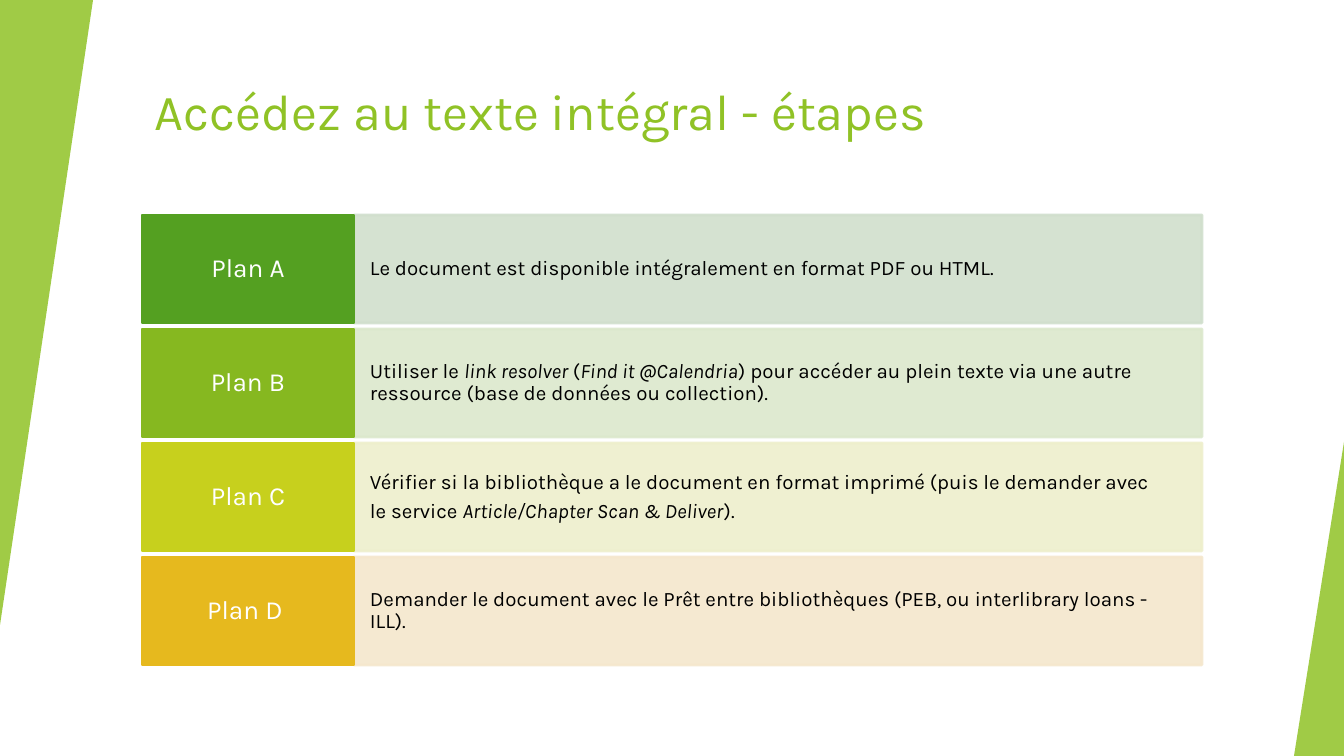
"""Build a slide listing four plans for reaching the full text of a document."""
from lxml.etree import SubElement
from pptx import Presentation
from pptx.dml.color import RGBColor
from pptx.enum.shapes import MSO_SHAPE
from pptx.enum.text import MSO_ANCHOR, PP_ALIGN
from pptx.oxml.ns import qn
from pptx.util import Pt

PX = 9144000 / 1344
COLORS = {"accent": "90C226", "white": "FFFFFF", "black": "000000"}
PLANS = [
    ("Plan A", "54A021", "D1DFCD",
     [[("Le document est disponible intégralement en format PDF ou HTML.", False)]]),
    ("Plan B", "86B820", "DCE8CC",
     [[("Utiliser le ", False), ("link resolver ", True), ("(", False),
       ("Find it @Calendria", True),
       (") pour accéder au plein texte via une autre ressource "
        "(base de données ou collection).", False)]]),
    ("Plan C", "C7D01D", "EEEFCC",
     [[("Vérifier si la bibliothèque a le document en format imprimé "
        "(puis le demander avec", False)],
      [("le service ", False), ("Article/Chapter Scan & Deliver", True), (").", False)]]),
    ("Plan D ", "E6B91E", "F5E7CD",
     [[("Demander le document avec le Prêt entre bibliothèques "
        "(PEB, ou interlibrary loans - ILL).", False)]]),
]


def add_block(kind, box, color, opacity=100, outlined=True):
    block = slide.shapes.add_shape(kind, *[round(n * PX) for n in box])
    block.shadow.inherit = False
    block.fill.solid()
    block.fill.fore_color.rgb = RGBColor.from_string(color)
    if outlined:
        block.line.width = Pt(1.5)
        block.line.color.rgb = RGBColor.from_string(color)
    else:
        block.line.fill.background()
    if opacity < 100:
        for tint in block.element.spPr.iter(qn("a:srgbClr")):
            SubElement(tint, qn("a:alpha")).set("val", str(opacity * 1000))
    return block


def write(block, paragraphs, size, color, align, inset_x, inset_y, anchor, spacing=None):
    frame = block.text_frame
    frame.word_wrap = True
    frame.vertical_anchor = anchor
    frame.margin_left = frame.margin_right = round(inset_x * PX)
    frame.margin_top = frame.margin_bottom = round(inset_y * PX)
    for index, parts in enumerate(paragraphs):
        paragraph = frame.add_paragraph() if index else frame.paragraphs[0]
        paragraph.alignment = align
        paragraph.font.name = "Karla"
        paragraph.font.size = Pt(size)
        paragraph.font.color.rgb = RGBColor.from_string(color)
        if spacing:
            paragraph.line_spacing = spacing
            paragraph.space_after = Pt(round(size * 0.35, 1))
        for words, italic in parts:
            run = paragraph.add_run()
            run.text = words
            if italic:
                run.font.italic = True


deck = Presentation()
deck.slide_width, deck.slide_height = round(1344 * PX), round(756 * PX)
slide = deck.slides.add_slide(deck.slide_layouts[6])

title = slide.shapes.add_textbox(*[round(n * PX) for n in (142, 67, 1124, 121)])
write(title, [[("Accédez au texte intégral - étapes", False)]], 27, COLORS["accent"],
      PP_ALIGN.LEFT, 13, 13, MSO_ANCHOR.TOP)

for box, rotation in (((0, 0, 93, 625), 180), ((1294, 442, 50, 314), 0)):
    wedge = add_block(MSO_SHAPE.ISOSCELES_TRIANGLE, box, COLORS["accent"], 85, False)
    wedge.adjustments[0] = 1
    wedge.rotation = rotation

for row, (plan, strong, pale, steps) in enumerate(PLANS):
    top = 215 + row * 114
    description = add_block(MSO_SHAPE.RECTANGLE, (354, top, 848, 108), pale, 90)
    write(description, steps, 11, COLORS["black"], PP_ALIGN.LEFT, 16, 27,
          MSO_ANCHOR.MIDDLE, 0.9)
    label = add_block(MSO_SHAPE.RECTANGLE, (142, top, 212, 108), strong)
    write(label, [[(plan, False)]], 14, COLORS["white"], PP_ALIGN.CENTER, 11, 11,
          MSO_ANCHOR.MIDDLE, 0.9)

deck.save("out.pptx")
